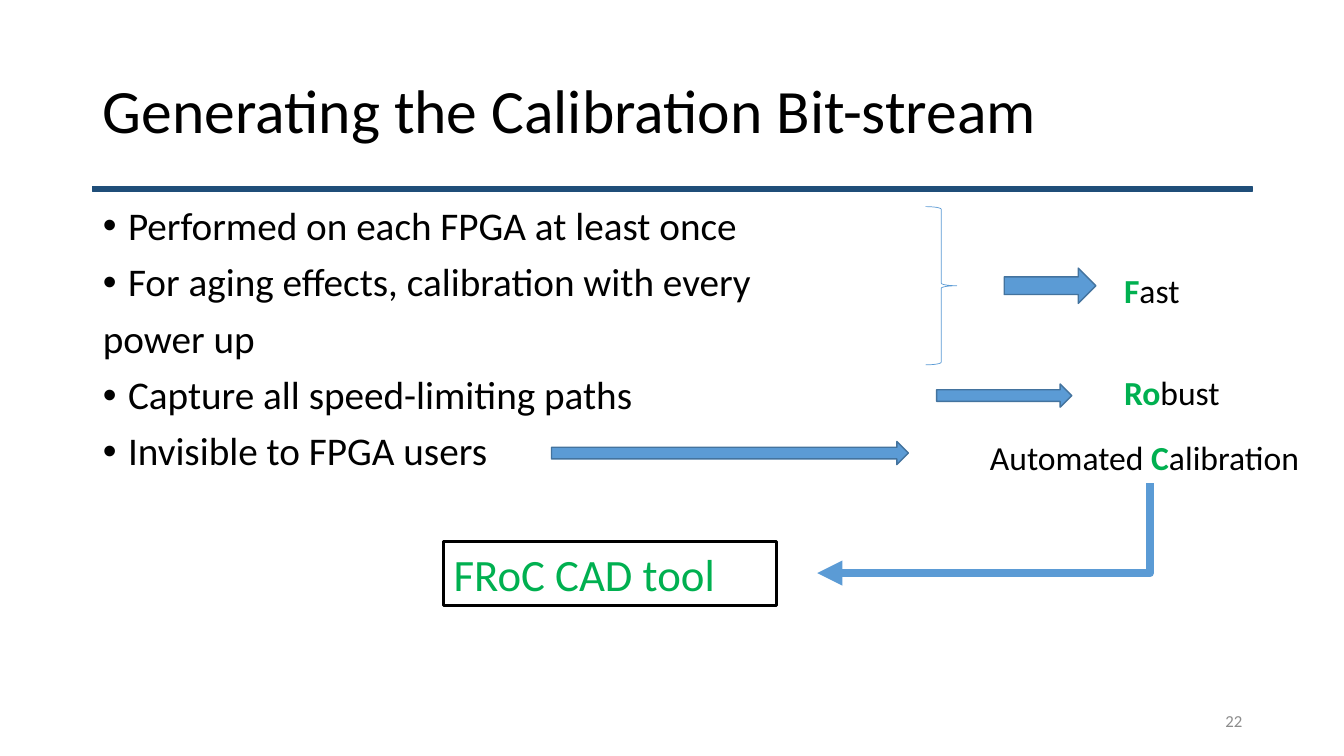
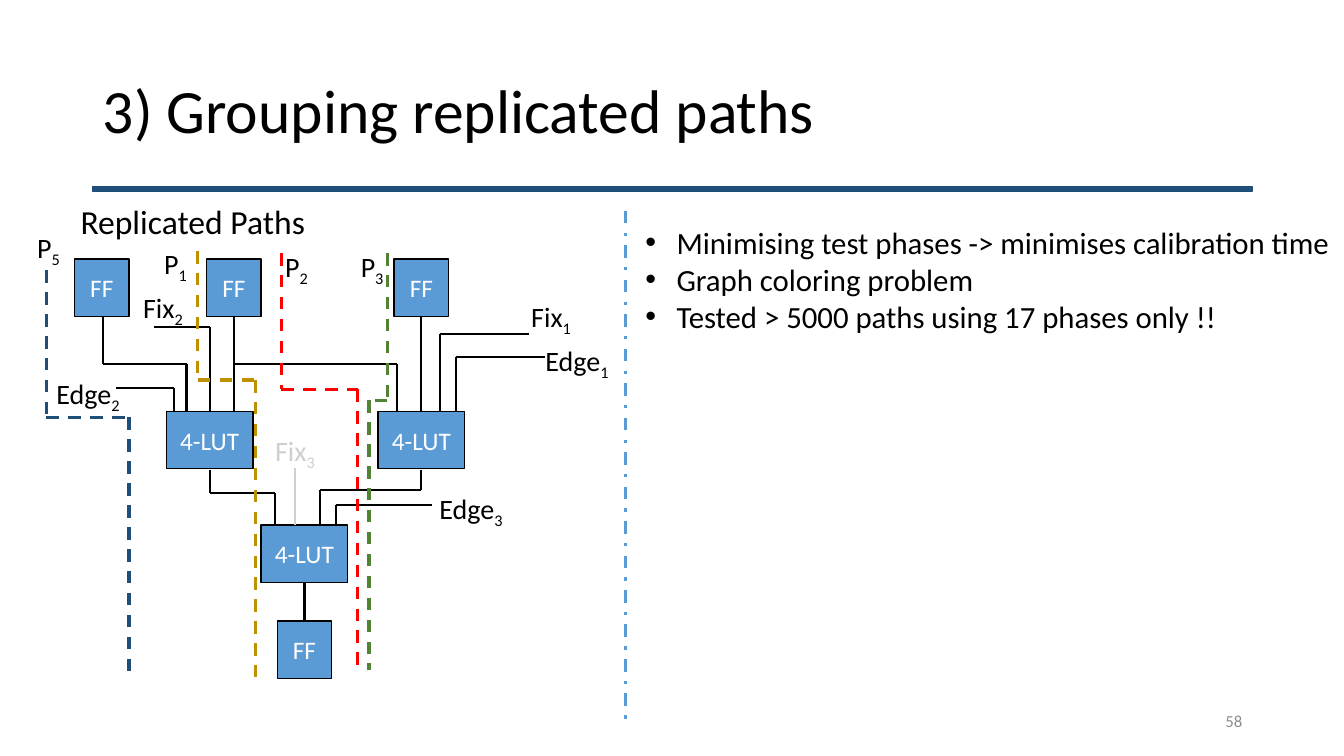
from pptx import Presentation
from pptx import util as u
from pptx.dml.color import RGBColor
from pptx.enum import dml, shapes, text
from pptx.oxml.ns import qn
from lxml import etree

PX = 9144  # EMU in one px, 100 px to the inch
FONT = "Calibri"
BLACK, WHITE, NAVY, BLUE = "000000", "FFFFFF", "1F4E79", "5B9BD5"
EDGE_BLUE, GREEN, GREY, PALE = "43739E", "00B050", "8C8C8C", "D0CECE"
GOLD, RED, OLIVE = "BF9000", "FF0000", "548235"
SHAPE, ALIGN, ANCHOR = shapes.MSO_SHAPE, text.PP_ALIGN, text.MSO_ANCHOR
DASH = dml.MSO_LINE


# ---- Basic parts ----
def px(*lengths):
    return [u.Emu(length * PX) for length in lengths]


def colour(hex_value):
    return RGBColor.from_string(hex_value)


def apply(target, **values):
    for name, value in values.items():
        setattr(target, name, value)


def write(para, spans, size, **para_format):
    """Each span is (text, colour, optional style: "bold" or "sub")."""
    apply(para, **para_format)
    for words, hex_value, *style in spans:
        span = para.add_run()
        span.text = words
        apply(span.font, name=FONT, size=u.Pt(size), bold="bold" in style)
        span.font.color.rgb = colour(hex_value)
        if "sub" in style:
            span.font._element.set("baseline", "-25000")


def set_frame(shape, anchor=ANCHOR.TOP):
    frame = shape.text_frame
    apply(frame, word_wrap=True, auto_size=text.MSO_AUTO_SIZE.NONE,
          vertical_anchor=anchor)
    return frame


def place(shape, box):
    apply(shape, **dict(zip(("left", "top", "width", "height"), px(*box))))


def add_label(slide, box, spans, size, anchor=ANCHOR.TOP, align=ALIGN.LEFT):
    label = slide.shapes.add_textbox(*px(*box))
    write(set_frame(label, anchor).paragraphs[0], spans, size, alignment=align)


def add_block(slide, kind, box, fill, line, width=1):
    block = slide.shapes.add_shape(kind, *px(*box))
    block.shadow.inherit = False
    if fill:
        block.fill.solid()
        block.fill.fore_color.rgb = colour(fill)
    else:
        block.fill.background()
    block.line.color.rgb = colour(line)
    block.line.width = u.Pt(width)
    return block


def add_line(slide, start, end, hex_value, width, dash=None,
             kind=shapes.MSO_CONNECTOR.STRAIGHT):
    line = slide.shapes.add_connector(kind, *px(*start, *end))
    line.line.color.rgb = colour(hex_value)
    apply(line.line, width=u.Pt(width), dash_style=dash)
    etree.SubElement(line._element.spPr, qn("a:effectLst"))
    return line


def add_route(slide, points, hex_value, width, dash=None):
    for start, end in zip(points, points[1:]):
        add_line(slide, start, end, hex_value, width, dash)


def set_bullet(para, indent):
    """Hang a bullet by indent px; an indent of 0 removes it."""
    props = para._p.get_or_add_pPr()
    props.set("marL", str(indent * PX))
    props.set("indent", str(-indent * PX))
    if indent:
        etree.SubElement(props, qn("a:buFont")).set("typeface", "Arial")
        etree.SubElement(props, qn("a:buChar")).set("char", "•")
    else:
        etree.SubElement(props, qn("a:buNone"))


def fill_list(slide, box, items, size, spacing, before):
    """Each item is (text, indent)."""
    body = slide.placeholders[1]
    place(body, box)
    frame = set_frame(body)
    for index, (words, indent) in enumerate(items):
        para = frame.add_paragraph() if index else frame.paragraphs[0]
        set_bullet(para, indent)
        write(para, [(words, BLACK)], size, line_spacing=spacing,
              space_before=u.Pt(before if index else 0),
              alignment=ALIGN.LEFT)


# ---- Shared slide frame ----
def add_slide(deck, title, number):
    slide = deck.slides.add_slide(deck.slide_layouts[1])
    add_block(slide, SHAPE.RECTANGLE, (92, 185, 1150, 5), NAVY, NAVY)
    place(slide.shapes.title, (92, 40, 1150, 145))
    frame = set_frame(slide.shapes.title, ANCHOR.MIDDLE)
    write(frame.paragraphs[0], [(title, BLACK)], 44, line_spacing=0.9,
          alignment=ALIGN.LEFT)
    add_label(slide, (942, 695, 300, 40), [(number, GREY)], 12,
              ANCHOR.MIDDLE, ALIGN.RIGHT)
    return slide


# ---- Bit-stream slide ----
def add_benefits(slide, left, top):
    """Brace, arrows and the qualities they lead to."""
    add_block(slide, SHAPE.RIGHT_BRACE, (left + 371, top, 31, 157),
              None, BLUE, 0.5)
    for x, y, width, height in [(449, 61, 91, 35), (382, 176, 134, 23),
                                (0, 233, 354, 23)]:
        add_block(slide, SHAPE.RIGHT_ARROW, (left + x, top + y, width, height),
                  BLUE, EDGE_BLUE)
    qualities = [
        (558, 58, 119, [("F", GREEN, "bold"), ("ast", BLACK)]),
        (558, 159, 119, [("Ro", GREEN, "bold"), ("bust", BLACK)]),
        (425, 224, 336, [("Automated ", BLACK), ("C", GREEN, "bold"),
                         ("alibration", BLACK)]),
    ]
    for x, y, width, spans in qualities:
        add_label(slide, (left + x, top + y, width, 50), spans, 24)


def add_tool(slide, left, top):
    """Named tool box and the bent arrow that comes down to it."""
    tool = add_block(slide, SHAPE.RECTANGLE, (left, top, 330, 64),
                     None, BLACK, 2.25)
    write(set_frame(tool).paragraphs[0], [("FRoC CAD tool", GREEN)], 32,
          alignment=ALIGN.LEFT)
    # The elbow is laid out upright, then turned a quarter
    arrow = add_line(slide, (left + 491, top - 178), (left + 580, top + 152),
                     BLUE, 6, kind=shapes.MSO_CONNECTOR.ELBOW)
    props = arrow._element.spPr
    props.find(qn("a:xfrm")).set("rot", "5400000")
    props.find(qn("a:prstGeom")).set("prst", "bentConnector2")
    tail = etree.SubElement(props.find(qn("a:ln")), qn("a:tailEnd"))
    tail.set("type", "triangle")


def build_bitstream(deck):
    slide = add_slide(deck, "Generating the Calibration Bit-stream", "22")
    fill_list(slide, (92, 200, 1150, 476), [
        ("Performed on each FPGA at least once", 25),
        ("For aging effects, calibration with every", 25),
        ("power up", 0),
        ("Capture all speed-limiting paths", 25),
        ("Invisible to FPGA users", 25),
    ], 28, 0.9, 10)
    add_benefits(slide, 547, 205)
    add_tool(slide, 440, 537)


# ---- Grouping slide ----
NODES = [  # text, width, centre, top
    ("FF", 54, 81, 67), ("FF", 54, 212, 67), ("FF", 54, 398, 67),
    ("4-LUT", 86, 188, 218), ("4-LUT", 86, 398, 218),
    ("4-LUT", 86, 282, 331), ("FF", 54, 282, 426),
]
WIRES = [
    [(82, 124), (82, 171), (165, 171), (165, 218)],
    [(212, 124), (212, 218)],
    [(212, 171), (374, 171), (374, 218)],
    [(398, 124), (398, 218)],
    [(188, 276), (188, 299), (253, 299), (253, 331)],
    [(398, 276), (398, 296), (297, 296), (297, 331)],
    [(282, 388), (282, 426)],
]
INPUTS = [  # name, index, label place, colour, wire
    ("Fix", "1", (497, 102), BLACK, [(416, 218), (416, 141), (505, 141)]),
    ("Edge", "1", (511, 146), BLACK, [(432, 218), (432, 164), (521, 164)]),
    ("Fix", "2", (112, 93), BLACK, [(188, 218), (188, 134), (133, 134)]),
    ("Edge", "2", (26, 179), BLACK, [(153, 218), (153, 195), (95, 195)]),
    ("Fix", "3", (243, 235), PALE, [(273, 331), (273, 274)]),
    ("Edge", "3", (406, 293), BLACK, [(313, 331), (313, 311), (408, 311)]),
]
PATHS = [  # index, label place, colour, route
    ("5", (7, 34), NAVY, [(26, 78), (26, 224), (108, 224), (108, 479)]),
    ("1", (133, 50), GOLD, [(176, 59), (176, 187), (233, 187), (233, 482)]),
    ("2", (253, 53), RED, [(259, 61), (259, 196), (335, 196), (335, 475)]),
    ("3", (328, 53), OLIVE, [(364, 61), (364, 207), (346, 207), (346, 475)]),
]


def add_circuit(slide, left, top):
    """Logic blocks, their wiring and the dashed test paths."""
    def shift(points):
        return [(left + x, top + y) for x, y in points]

    def add_name(name, index, spot, width, hex_value):
        add_label(slide, (*shift([spot])[0], width, 44),
                  [(name, hex_value), (index, hex_value, "sub")], 20)

    add_label(slide, (left + 50, top + 4, 405, 50),
              [("Replicated Paths", BLACK)], 24)
    for wire in WIRES:
        add_route(slide, shift(wire), BLACK, 1.5)
    for words, width, centre, y in NODES:
        box = (left + centre - width // 2, top + y, width, 57)
        node = add_block(slide, SHAPE.RECTANGLE, box, BLUE, BLACK)
        write(set_frame(node, ANCHOR.MIDDLE).paragraphs[0], [(words, WHITE)],
              18, alignment=ALIGN.CENTER)
    for name, index, spot, hex_value, wire in INPUTS:
        add_route(slide, shift(wire), hex_value, 1.5)
        add_name(name, index, spot, 121, hex_value)
    for index, spot, hex_value, route in PATHS:
        add_route(slide, shift(route), hex_value, 2.25, DASH.DASH)
        add_name("P", index, spot, 47, BLACK)


def build_grouping(deck):
    slide = add_slide(deck, "3) Grouping replicated paths", "58")
    add_circuit(slide, 20, 190)
    add_line(slide, (620, 209), (620, 720), BLUE, 2.25, DASH.DASH_DOT)
    fill_list(slide, (630, 217, 703, 158), [
        ("Minimising test phases -> minimises calibration time", 31),
        ("Graph coloring problem", 31),
        ("Tested > 5000 paths using 17 phases only !!", 31),
    ], 22, 1.0, 0)


def main():
    deck = Presentation()
    deck.slide_width, deck.slide_height = px(1333, 750)
    build_bitstream(deck)
    build_grouping(deck)
    deck.save("out.pptx")


if __name__ == "__main__":
    main()
